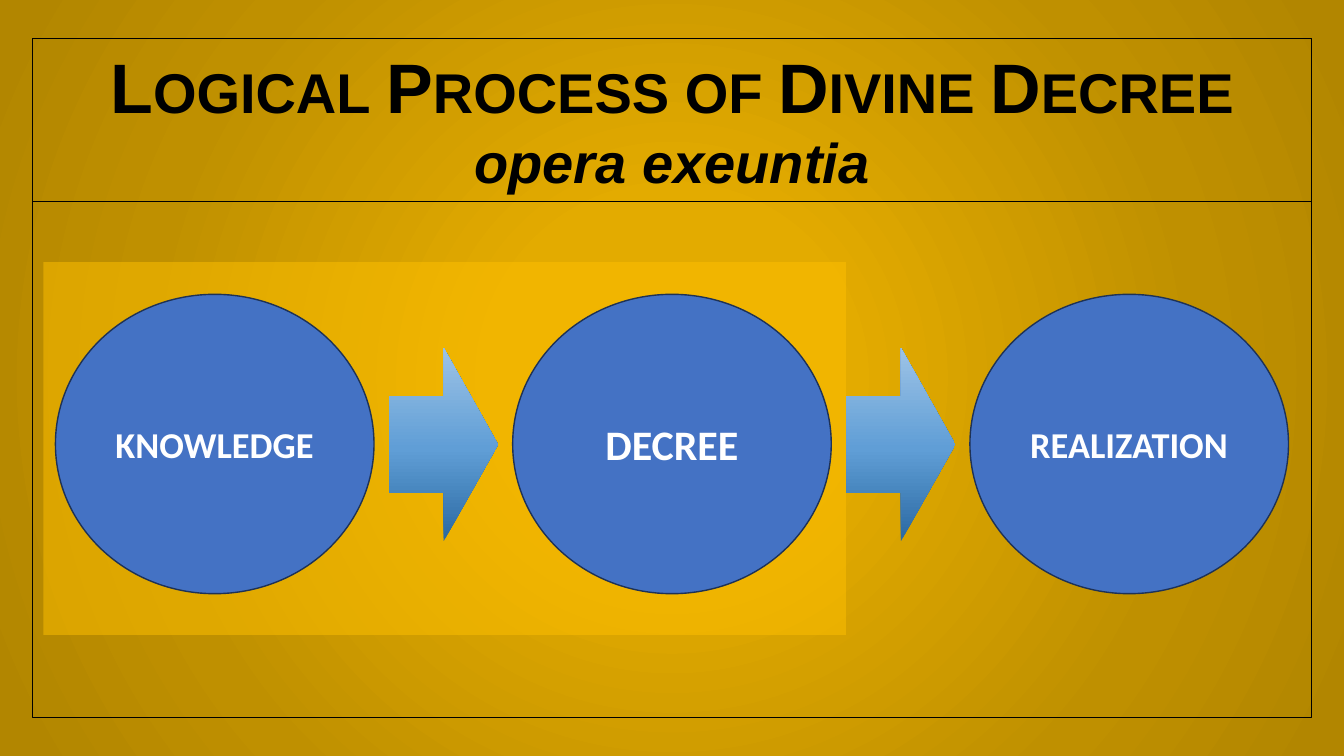
import pptx
import pptx.dml.color
import pptx.enum.shapes
import pptx.enum.text
import pptx.oxml
import pptx.oxml.ns
import pptx.util
from pptx.util import Inches

RGBColor = pptx.dml.color.RGBColor
SHAPES = pptx.enum.shapes.MSO_SHAPE

HEADING = [
    ("Logical Process of Divine Decree", 50, {"cap": "small"}),
    ("opera exeuntia", 40, {"i": "1"}),
]
STAGES = [("KNOWLEDGE", 26), ("DECREE", 30), ("REALIZATION", 26)]

BLACK = RGBColor(0x00, 0x00, 0x00)
WHITE = RGBColor(0xFF, 0xFF, 0xFF)
BLUE = RGBColor(0x44, 0x72, 0xC4)
NAVY = RGBColor(0x1E, 0x32, 0x56)
GOLD = RGBColor(0xFF, 0xC0, 0x00)
BACKDROP_STOPS = [
    (0, RGBColor(0xE3, 0xAB, 0x00)),
    (23, RGBColor(0xE3, 0xAB, 0x00)),
    (69, RGBColor(0xBF, 0x90, 0x00)),
    (97, RGBColor(0xB2, 0x86, 0x00)),
]
ARROW_STOPS = [
    (0, RGBColor(0x2A, 0x69, 0xA2)),
    (48, RGBColor(0x60, 0x9E, 0xD6)),
    (100, RGBColor(0x9D, 0xC3, 0xE6)),
]
RADIAL = ('<a:path path="circle"><a:fillToRect l="50000" t="50000" '
          'r="50000" b="50000"/></a:path>')
UPWARD = '<a:lin ang="16200000" scaled="0"/>'

FRAME_LEFT, FRAME_TOP, FRAME_WIDTH = 0.32, 0.38, 12.69
HEADING_HEIGHT, FRAME_HEIGHT = 1.62, 6.74
STAGE_LEFT, STAGE_TOP, STAGE_WIDTH, STAGE_HEIGHT = 0.55, 2.92, 3.16, 2.97
STAGE_STEP = 4.535
ARROW_GAP, ARROW_TOP, ARROW_WIDTH, ARROW_HEIGHT = 0.15, 3.45, 1.08, 1.92


def paint_gradient(fill, owner, stops, direction):
    """Fill the owner element with a gradient of the given stops."""
    fill.gradient()
    gradient = owner.find(".//" + pptx.oxml.ns.qn("a:gradFill"))
    marks = "".join(
        f'<a:gs pos="{place * 1000}"><a:srgbClr val="{color}"/></a:gs>'
        for place, color in stops)
    painted = pptx.oxml.parse_xml(
        f'<a:gradFill {pptx.oxml.ns.nsdecls("a")} rotWithShape="1">'
        f'<a:gsLst>{marks}</a:gsLst>{direction}</a:gradFill>')
    gradient.getparent().replace(gradient, painted)


def outline(shape, color, width):
    """Give the shape a solid outline."""
    shape.line.color.rgb = color
    shape.line.width = pptx.util.Pt(width)


def add_part(slide, kind, left, top, width, height):
    """Add a preset shape without shadow or outline."""
    part = slide.shapes.add_shape(
        kind, Inches(left), Inches(top), Inches(width), Inches(height))
    part.shadow.inherit = False
    part.line.fill.background()
    return part


def write(paragraph, text, size, font, color):
    """Add one bold centred run to the paragraph."""
    paragraph.alignment = pptx.enum.text.PP_ALIGN.CENTER
    run = paragraph.add_run()
    run.text = text
    run.font.name = font
    run.font.size = pptx.util.Pt(size)
    run.font.bold = True
    run.font.color.rgb = color
    return run


def add_heading(slide):
    """Fill the title placeholder with the two heading lines."""
    heading = slide.shapes.title
    heading.left, heading.top = Inches(FRAME_LEFT), Inches(FRAME_TOP)
    heading.width, heading.height = Inches(FRAME_WIDTH), Inches(HEADING_HEIGHT)
    outline(heading, BLACK, 0.75)
    frame = heading.text_frame
    frame.word_wrap = True
    frame.auto_size = pptx.enum.text.MSO_AUTO_SIZE.SHAPE_TO_FIT_TEXT
    frame.vertical_anchor = pptx.enum.text.MSO_ANCHOR.TOP
    for index, (text, size, style) in enumerate(HEADING):
        paragraph = frame.add_paragraph() if index else frame.paragraphs[0]
        run = write(paragraph, text, size, "Arial", BLACK)
        for key, value in style.items():
            run.font._element.set(key, value)


def add_stage(slide, index, label, size):
    """Add one stage circle and the arrow leading to the next stage."""
    left = STAGE_LEFT + index * STAGE_STEP
    stage = add_part(slide, SHAPES.OVAL, left, STAGE_TOP, STAGE_WIDTH, STAGE_HEIGHT)
    stage.fill.solid()
    stage.fill.fore_color.rgb = BLUE
    outline(stage, NAVY, 1)
    stage.text_frame.word_wrap = True
    stage.text_frame.vertical_anchor = pptx.enum.text.MSO_ANCHOR.MIDDLE
    write(stage.text_frame.paragraphs[0], label, size, "Calibri", WHITE)
    if index < len(STAGES) - 1:
        arrow = add_part(slide, SHAPES.RIGHT_ARROW, left + STAGE_WIDTH + ARROW_GAP,
                         ARROW_TOP, ARROW_WIDTH, ARROW_HEIGHT)
        paint_gradient(arrow.fill, arrow._element, ARROW_STOPS, UPWARD)


def main():
    """Build the slide and save it."""
    deck = pptx.Presentation()
    deck.slide_width, deck.slide_height = Inches(13.33), Inches(7.5)
    slide = deck.slides.add_slide(deck.slide_layouts[5])
    paint_gradient(slide.background.fill, slide._element, BACKDROP_STOPS, RADIAL)
    add_heading(slide)

    highlight = add_part(slide, SHAPES.RECTANGLE, 0.43, 2.6, 7.96, 3.7)
    highlight.fill.solid()
    highlight.fill.fore_color.rgb = GOLD
    gold = highlight._element.spPr.find(".//" + pptx.oxml.ns.qn("a:srgbClr"))
    gold.append(pptx.oxml.parse_xml(
        f'<a:alpha {pptx.oxml.ns.nsdecls("a")} val="50000"/>'))

    for index, (label, size) in enumerate(STAGES):
        add_stage(slide, index, label, size)

    border = add_part(slide, SHAPES.RECTANGLE, FRAME_LEFT, FRAME_TOP,
                      FRAME_WIDTH, FRAME_HEIGHT)
    border.fill.background()
    outline(border, BLACK, 0.75)
    deck.save("out.pptx")


if __name__ == "__main__":
    main()
